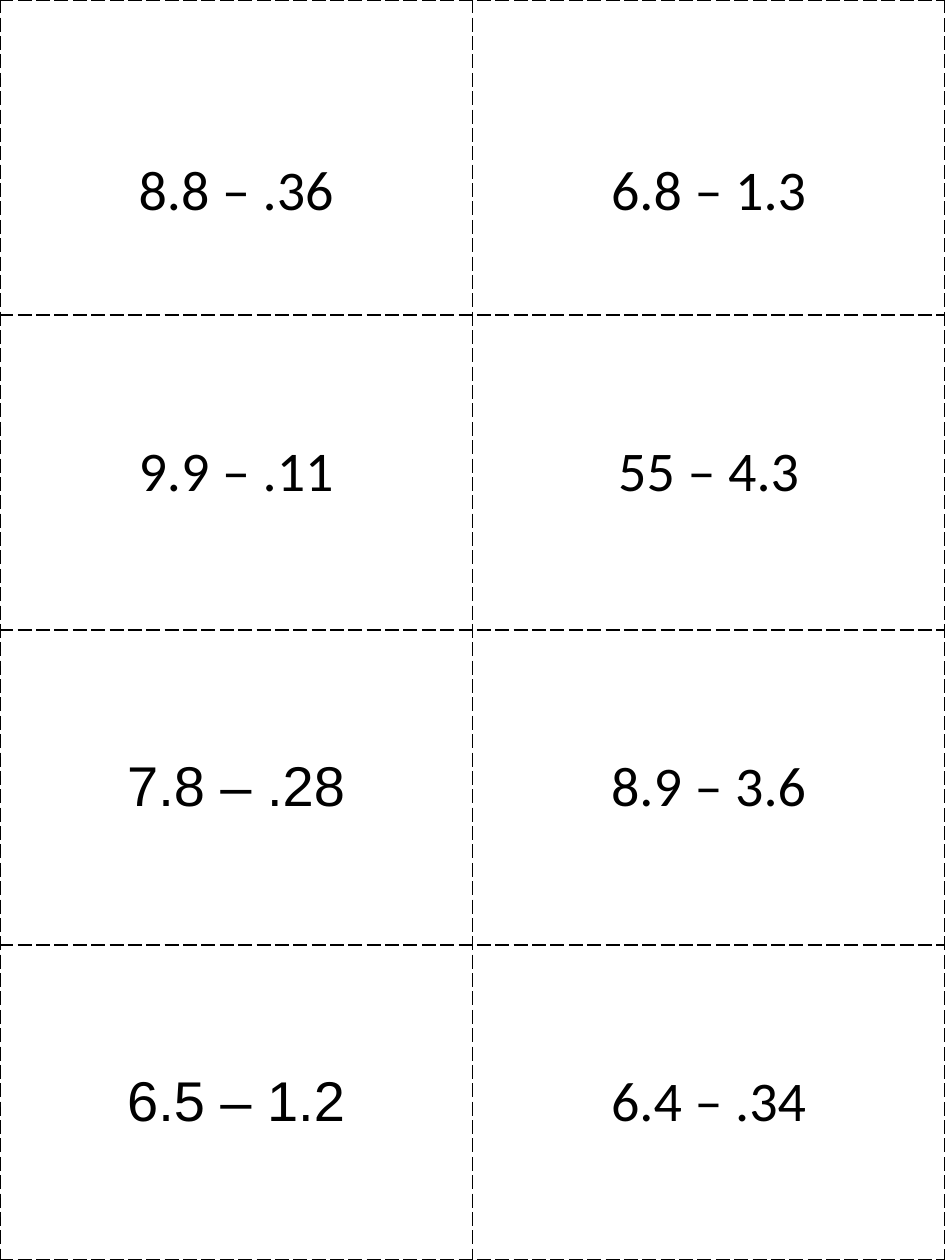
from lxml import etree
from pptx import Presentation
from pptx import util as u
from pptx.dml.color import RGBColor
from pptx.enum import text
from pptx.oxml.ns import qn

BLACK = RGBColor(0x00, 0x00, 0x00)

PROBLEMS = [
    ["8.8 – .36", "6.8 – 1.3"],
    ["9.9 – .11", "55 – 4.3"],
    ["7.8 – .28", "8.9 – 3.6"],
    ["6.5 – 1.2", "6.4 – .34"],
]
ARIAL_CARDS = {(2, 0), (3, 0)}


class CardSheet:
    """Holds the text style and the slide the cards are set on."""

    size = u.Pt(32)
    line_height = u.Inches(0.54)
    border = u.Pt(1)

    def __init__(self, prs):
        self.prs = prs
        self.slide = prs.slides.add_slide(prs.slide_layouts[6])

    def table(self, rows):
        """Add a table of equal cells that fills the slide."""
        width, height = self.prs.slide_width, self.prs.slide_height
        frame = self.slide.shapes.add_table(
            len(rows), len(rows[0]), 0, 0, width, height)
        table = frame.table
        table.first_row = table.horz_banding = False
        for column in table.columns:
            column.width = width // len(rows[0])
        for row in table.rows:
            row.height = height // len(rows)
        return table

    def card(self, cell, problem, font, lowered=False):
        """Set one problem in the middle of a cell, or half a line lower."""
        cell.fill.background()
        cell.vertical_anchor = text.MSO_ANCHOR.MIDDLE
        cell.margin_left = cell.margin_right = u.Inches(0.1)
        cell.margin_top = cell.margin_bottom = u.Inches(0.05)
        if lowered:
            cell.margin_top += self.line_height
        p = cell.text_frame.paragraphs[0]
        p.text = problem
        p.alignment = text.PP_ALIGN.CENTER
        r = p.runs[0]
        r.font.name = font
        r.font.size = self.size
        r.font.color.rgb = BLACK
        self.cut_lines(cell)

    def cut_lines(self, cell):
        """Draw dashed borders; they come before the fill in the cell's XML."""
        props = cell._tc.get_or_add_tcPr()
        for i, side in enumerate(("lnL", "lnR", "lnT", "lnB")):
            line = etree.Element(qn(f"a:{side}"), w=str(self.border))
            fill = etree.SubElement(line, qn("a:solidFill"))
            etree.SubElement(fill, qn("a:srgbClr"), val=str(BLACK))
            etree.SubElement(line, qn("a:prstDash"), val="lgDash")
            props.insert(i, line)


def main():
    prs = Presentation()
    prs.slide_width, prs.slide_height = u.Inches(7.5), u.Inches(10)
    sheet = CardSheet(prs)

    # Cards with subtraction problems
    table = sheet.table(PROBLEMS)
    for row, problems in enumerate(PROBLEMS):
        for col, problem in enumerate(problems):
            font = "Arial" if (row, col) in ARIAL_CARDS else "Calibri"
            sheet.card(table.cell(row, col), problem, font, lowered=row == 0)

    prs.save("out.pptx")


if __name__ == "__main__":
    main()
